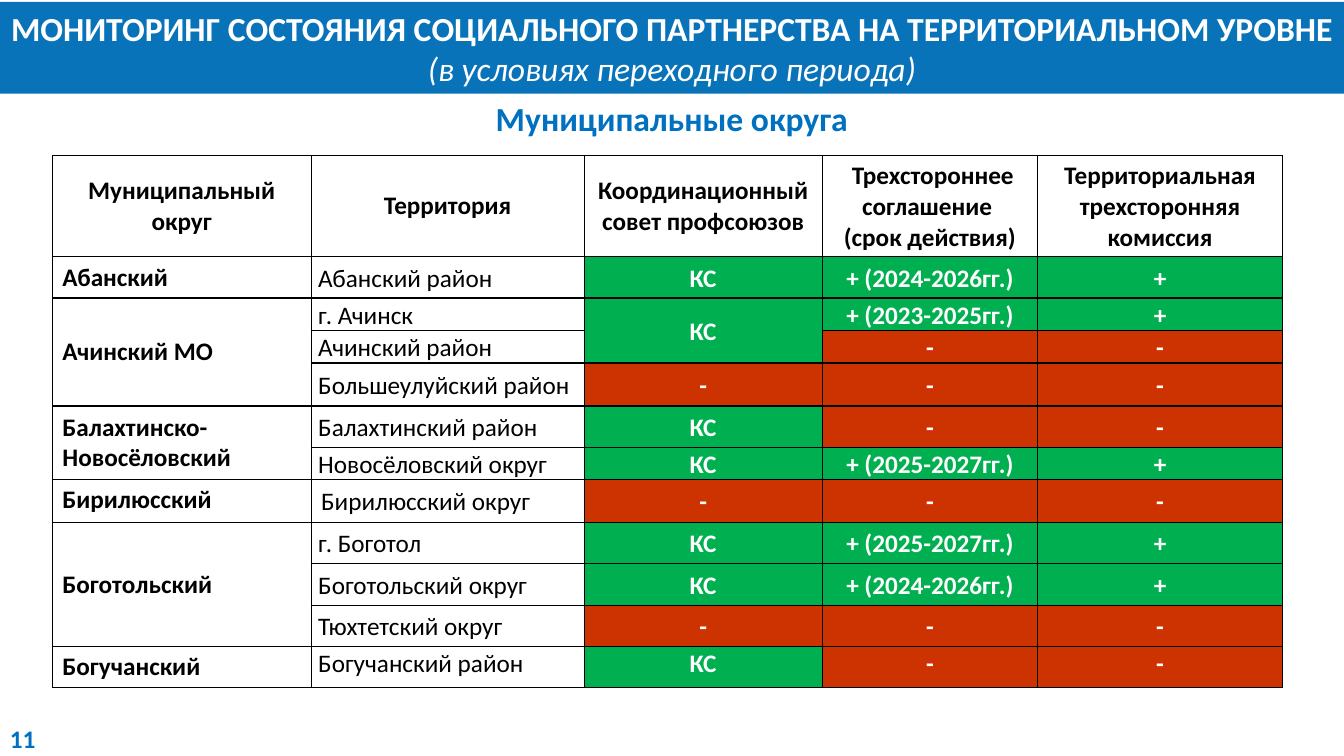
from dataclasses import dataclass
from typing import Any

from lxml.etree import SubElement
from pptx import Presentation
from pptx.dml.color import RGBColor
from pptx.enum.text import MSO_ANCHOR, MSO_AUTO_SIZE, PP_ALIGN
from pptx.oxml.ns import qn
from pptx.util import Cm, Pt

BLACK, WHITE, BLUE = "000000", "FFFFFF", "0070C0"
BANNER, GREEN, RED = "0973BA", "00B050", "CC3300"
LEFT, CENTER = PP_ALIGN.LEFT, PP_ALIGN.CENTER
LOOSE = {"line_spacing": 1.07, "space_after": Pt(8)}
TIGHT = {"margin_left": Cm(0.18), "margin_right": Cm(0.18),
         "margin_top": 0, "margin_bottom": 0}


@dataclass
class Area:
    """One territory; an empty council shares the cell above."""
    name: str
    council: str
    deal: str
    height: float = 1.04
    roomy: tuple[int, ...] = ()
    high: tuple[int, ...] = ()


@dataclass
class District:
    name: str
    areas: list[Area]


HEADS = ["Муниципальный округ", "Территория", "Координационный совет профсоюзов",
         " Трехстороннее соглашение \v(срок действия)",
         "Территориальная трехсторонняя комиссия"]
WIDTHS = [6.52, 6.88, 6, 5.43, 6.17]
HEAD_HEIGHT = 2.55
DISTRICTS = [
    District("Абанский", [Area("Абанский район", "КС", "+ (2024-2026гг.)")]),
    District("Ачинский МО", [
        Area("г. Ачинск", "КС", "+ (2023-2025гг.)", 0.82, (2,)),
        Area("Ачинский район", "", "-", 0.82),
        Area("Большеулуйский район", "-", "-", 1.08, (2,))]),
    District("Балахтинско-Новосёловский", [
        Area("Балахтинский район", "КС", "-"),
        Area("Новосёловский округ", "КС", "+ (2025-2027гг.)", 0.82)]),
    District("Бирилюсский", [
        Area("Бирилюсский округ", "-", "-", 1.08, (1,), (0,))]),
    District("Боготольский", [
        Area("г. Боготол", "КС", "+ (2025-2027гг.)"),
        Area("Боготольский округ", "КС", "+ (2024-2026гг.)"),
        Area("Тюхтетский округ", "-", "-")]),
    District("Богучанский", [
        Area("Богучанский район", "КС", "-", high=(1, 2, 3, 4))]),
]


def color(code: str) -> RGBColor:
    return RGBColor.from_string(code)


def apply(target: Any, values: dict[str, Any]) -> None:
    for key, value in values.items():
        setattr(target, key, value)


def paint(target: Any, code: str) -> None:
    target.fill.solid()
    target.fill.fore_color.rgb = color(code)


def style(run: Any, size: int, code: str, bold: bool = True, italic: bool = False) -> None:
    apply(run.font, {"name": "Calibri", "size": Pt(size), "bold": bold, "italic": italic})
    run.font.color.rgb = color(code)


def border(cell: Any) -> None:
    props = cell._tc.get_or_add_tcPr()
    for side in ("lnL", "lnR", "lnT", "lnB"):
        line = SubElement(props, qn(f"a:{side}"), w=str(Pt(1)))
        SubElement(SubElement(line, qn("a:solidFill")), qn("a:srgbClr"), val=BLACK)


def write(cell: Any, text: str, align: Any, code: str = BLACK, bold: bool = True) -> None:
    para = cell.text_frame.paragraphs[0]
    para.text = text
    para.alignment = align
    for run in para.runs:
        style(run, 18, code, bold)


def label(slide: Any, text: str, box: tuple[float, ...], size: int, align: Any, wrap: bool) -> None:
    frame = slide.shapes.add_textbox(*map(Cm, box)).text_frame
    frame.word_wrap = wrap
    para = frame.paragraphs[0]
    para.alignment = align
    run = para.add_run()
    run.text = text
    style(run, size, BLUE)


def banner(slide: Any) -> None:
    title = slide.shapes.title
    apply(title, {"left": 0, "top": Cm(0.05), "width": Cm(33.87), "height": Cm(2.31)})
    paint(title, BANNER)
    apply(title.text_frame, {"auto_size": MSO_AUTO_SIZE.NONE, "word_wrap": True,
                             "vertical_anchor": MSO_ANCHOR.MIDDLE})
    para = title.text_frame.paragraphs[0]
    para.alignment = CENTER
    head, note = para.add_run(), para.add_run()
    head.text = "МОНИТОРИНГ СОСТОЯНИЯ СОЦИАЛЬНОГО ПАРТНЕРСТВА НА ТЕРРИТОРИАЛЬНОМ УРОВНЕ "
    note.text = "(в условиях переходного периода)"
    style(head, 24, WHITE)
    style(note, 24, WHITE, bold=False, italic=True)


def fill_area(table: Any, row: int, area: Area) -> None:
    texts = [area.name, area.council, area.deal, area.deal[0]]
    for col, text in enumerate(texts, 1):
        cell = table.cell(row, col)
        if not text:
            table.cell(row - 1, col).merge(cell)
            continue
        if col not in area.roomy:
            apply(cell, TIGHT)
        if col == 1:
            write(cell, text, LEFT, bold=False)
        else:
            paint(cell, RED if text == "-" else GREEN)
            write(cell, text, CENTER, WHITE)
        apply(cell.text_frame.paragraphs[0], LOOSE)
    for col in area.high:
        table.cell(row, col).vertical_anchor = MSO_ANCHOR.TOP


def monitor(slide: Any) -> None:
    areas = [area for district in DISTRICTS for area in district.areas]
    heights = [HEAD_HEIGHT] + [area.height for area in areas]
    table = slide.shapes.add_table(len(heights), len(WIDTHS), Cm(1.32), Cm(3.92),
                                   Cm(sum(WIDTHS)), Cm(sum(heights))).table
    apply(table, {"first_row": False, "horz_banding": False})
    for column, width in zip(table.columns, WIDTHS):
        column.width = Cm(width)
    for row, height in zip(table.rows, heights):
        row.height = Cm(height)
    for cell in table.iter_cells():
        border(cell)
        paint(cell, WHITE)
        cell.vertical_anchor = MSO_ANCHOR.MIDDLE
    for col, head in enumerate(HEADS):
        write(table.cell(0, col), head, CENTER)
    row = 1
    for district in DISTRICTS:
        first, last = row, row + len(district.areas) - 1
        if last > first:
            table.cell(first, 0).merge(table.cell(last, 0))
        write(table.cell(first, 0), district.name, LEFT)
        for area in district.areas:
            fill_area(table, row, area)
            row += 1


def main() -> None:
    deck = Presentation()
    apply(deck, {"slide_width": Cm(33.87), "slide_height": Cm(19.05)})
    slide = deck.slides.add_slide(deck.slide_layouts[5])
    banner(slide)
    label(slide, "Муниципальные округа", (12.09, 2.34, 9.68, 1.28), 24, CENTER, False)
    monitor(slide)
    label(slide, "11", (0, 18.11, 1.32, 1.02), 18, LEFT, True)
    deck.save("out.pptx")


if __name__ == "__main__":
    main()
